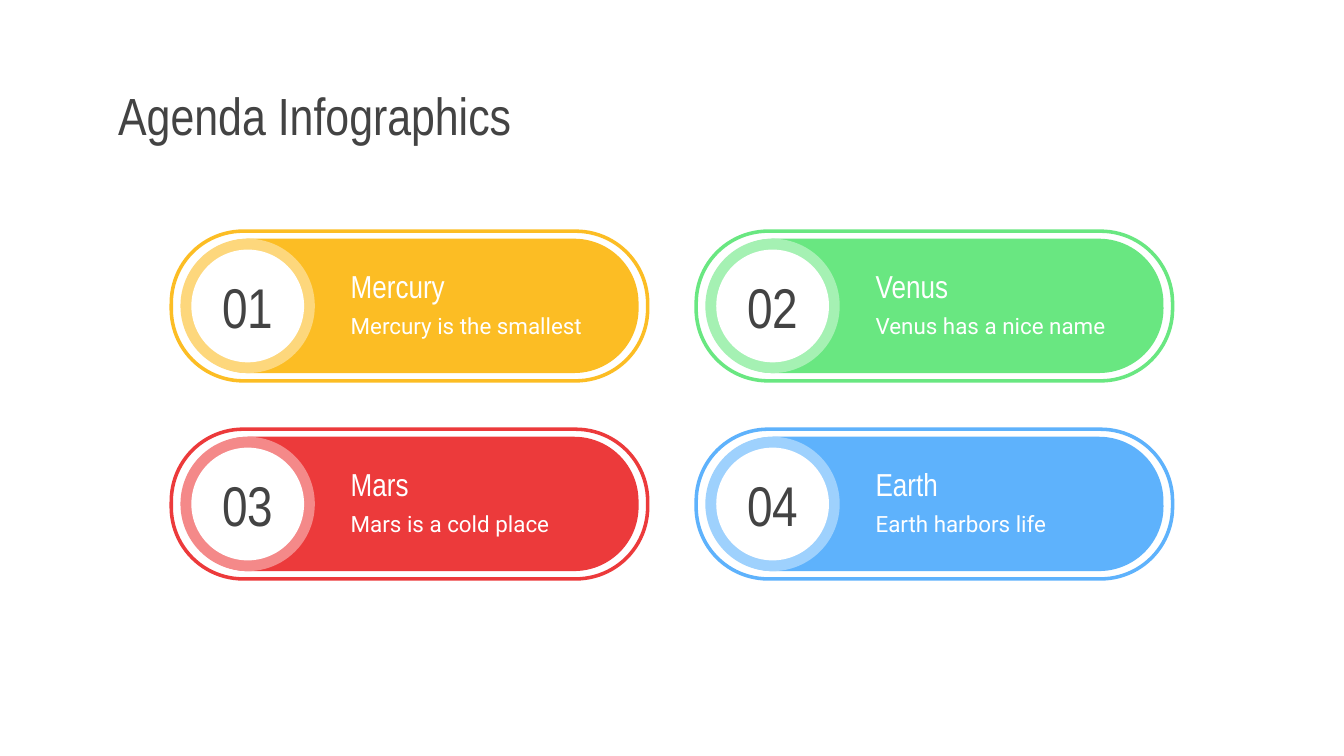
from pptx import Presentation
from pptx.dml.color import RGBColor
from pptx.enum.shapes import MSO_SHAPE
from pptx.enum.text import MSO_ANCHOR, PP_ALIGN
from pptx.util import Pt

PILL = MSO_SHAPE.ROUNDED_RECTANGLE
CIRCLE = MSO_SHAPE.OVAL
MIDDLE = MSO_ANCHOR.MIDDLE
LEFT = PP_ALIGN.LEFT
CENTER = PP_ALIGN.CENTER

DARK = RGBColor(0x43, 0x43, 0x43)
WHITE = RGBColor(0xFF, 0xFF, 0xFF)
YELLOW = RGBColor(0xFC, 0xBD, 0x24)
PALE_YELLOW = RGBColor(0xFD, 0xD7, 0x7C)
GREEN = RGBColor(0x69, 0xE7, 0x81)
PALE_GREEN = RGBColor(0xA5, 0xF1, 0xB3)
RED = RGBColor(0xEC, 0x3A, 0x3B)
PALE_RED = RGBColor(0xF4, 0x89, 0x89)
BLUE = RGBColor(0x5E, 0xB2, 0xFC)
PALE_BLUE = RGBColor(0x9E, 0xD1, 0xFD)

HEADING_FONT = "Arial Narrow"
BODY_FONT = "Roboto"

COLUMNS = 2
GRID_LEFT, GRID_TOP = 90.8, 122.9
COLUMN_STEP, ROW_STEP = 281.2, 106.1
BORDER = 1.9

AGENDA = [
    ("Mercury", "Mercury is the smallest", YELLOW, PALE_YELLOW),
    ("Venus", "Venus has a nice name", GREEN, PALE_GREEN),
    ("Mars", "Mars is a cold place", RED, PALE_RED),
    ("Earth", "Earth harbors life", BLUE, PALE_BLUE),
]


def write(holder, words, size, font, color, align=LEFT):
    frame = holder.text_frame
    frame.word_wrap = True
    frame.vertical_anchor = MIDDLE
    frame.margin_left = frame.margin_right = Pt(7.2)
    frame.margin_top = frame.margin_bottom = Pt(7.2)
    paragraph = frame.paragraphs[0]
    paragraph.alignment = align
    run = paragraph.add_run()
    run.text = words
    run.font.size = Pt(size)
    run.font.name = font
    run.font.color.rgb = color


def add_label(slide, left, top, width, height, words, size, font, color):
    label = slide.shapes.add_textbox(Pt(left), Pt(top), Pt(width), Pt(height))
    write(label, words, size, font, color)


def add_plain(slide, kind, left, top, width, height):
    plain = slide.shapes.add_shape(kind, Pt(left), Pt(top), Pt(width), Pt(height))
    plain.shadow.inherit = False
    if kind == PILL:
        plain.adjustments[0] = 0.48
    return plain


def add_filled(slide, kind, left, top, width, height, color):
    filled = add_plain(slide, kind, left, top, width, height)
    filled.fill.solid()
    filled.fill.fore_color.rgb = color
    filled.line.fill.background()
    return filled


def add_border(slide, left, top, width, height, color):
    border = add_plain(slide, PILL, left, top, width, height)
    border.fill.background()
    border.line.color.rgb = color
    border.line.width = Pt(BORDER)


def add_card(slide, index, planet, fact, color, pale):
    row, column = divmod(index, COLUMNS)
    left = GRID_LEFT + column * COLUMN_STEP
    top = GRID_TOP + row * ROW_STEP
    add_filled(slide, PILL, left + 7.9, top + 5, 243.4, 72, color)
    add_filled(slide, CIRCLE, left + 5.9, top + 5, 72, 72, pale)
    disc = add_filled(slide, CIRCLE, left + 11.7, top + 10.8, 60.4, 60.4, WHITE)
    write(disc, f"{index + 1:02d}", 30, HEADING_FONT, DARK, CENTER)
    add_border(slide, left + BORDER / 2, top + BORDER / 2, 255.2, 80.2, color)
    add_label(slide, left + 90, top + 37, 143.3, 28.8, fact, 12, BODY_FONT, WHITE)
    add_label(slide, left + 90, top + 15.9, 143.3, 28.8, planet, 17, HEADING_FONT, WHITE)


def main():
    deck = Presentation()
    deck.slide_width, deck.slide_height = Pt(720), Pt(405)
    slide = deck.slides.add_slide(deck.slide_layouts[6])
    add_label(slide, 56.2, 42.5, 608.4, 38.2, "Agenda Infographics", 28, HEADING_FONT, DARK)
    for index, entry in enumerate(AGENDA):
        add_card(slide, index, *entry)
    deck.save("out.pptx")


if __name__ == "__main__":
    main()
